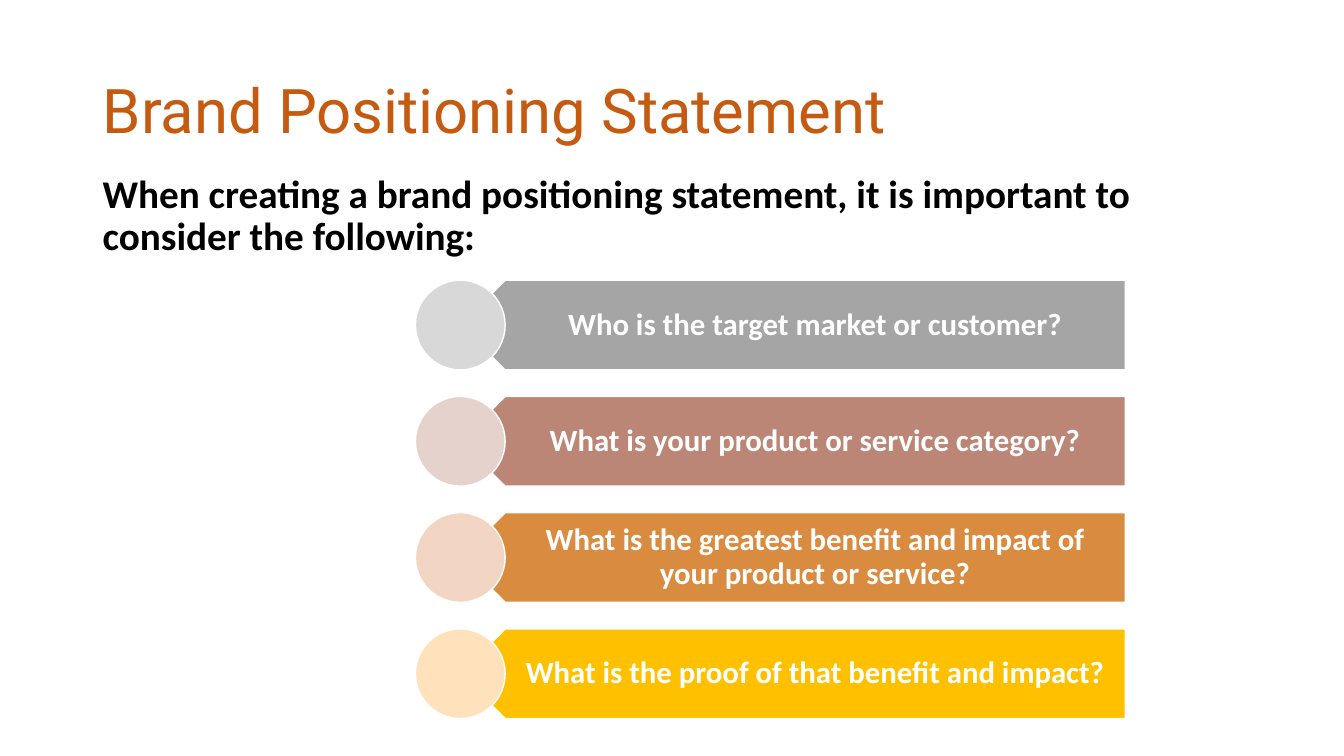
from dataclasses import dataclass

from pptx import Presentation
from pptx.dml.color import RGBColor
from pptx.enum.shapes import MSO_SHAPE
from pptx.enum.text import MSO_ANCHOR, PP_ALIGN
from pptx.util import Inches, Pt

PENTAGON = MSO_SHAPE.PENTAGON
OVAL = MSO_SHAPE.OVAL
TOP, MIDDLE = MSO_ANCHOR.TOP, MSO_ANCHOR.MIDDLE
LEFT, CENTER = PP_ALIGN.LEFT, PP_ALIGN.CENTER


@dataclass(frozen=True)
class Theme:
    title_font: str = "Roboto"
    body_font: str = "Calibri"
    title_size: int = 44
    body_size: int = 28
    question_size: int = 22
    title_color: str = "C55A11"
    body_color: str = "000000"
    white: str = "FFFFFF"
    banners: tuple = ("A5A5A5", "BB8676", "D98B3F", "FFC000")
    circles: tuple = ("D8D8D8", "E6D2CD", "F3D5C4", "FFE1BB")


THEME = Theme()
SLIDE_WIDTH, SLIDE_HEIGHT = 13.33, 7.5
MARGIN = 0.92
CONTENT_WIDTH = SLIDE_WIDTH - 2 * MARGIN
FIRST_ROW, ROW_PITCH, ROW_HEIGHT = 2.78, 1.153, 0.89
CIRCLE_LEFT = 4.12
BANNER_LEFT = CIRCLE_LEFT + ROW_HEIGHT / 2
BANNER_RIGHT = 11.16
QUESTION_LEFT = BANNER_LEFT + ROW_HEIGHT / 4
QUESTION_INSETS = (0.39, 0.09, 0.17, 0.09)

QUESTIONS = (
    "Who is the target market or customer?",
    "What is your product or service category?",
    "What is the greatest benefit and impact of your product or service?",
    "What is the proof of that benefit and impact?",
)


def add_text(page, text, left, top, width, height, *, size, color,
             font=THEME.body_font, bold=False, align=LEFT, anchor=TOP,
             insets=(0.1, 0.05, 0.1, 0.05)):
    box = page.shapes.add_textbox(Inches(left), Inches(top), Inches(width), Inches(height))
    frame = box.text_frame
    frame.word_wrap = True
    frame.vertical_anchor = anchor
    (frame.margin_left, frame.margin_top,
     frame.margin_right, frame.margin_bottom) = map(Inches, insets)
    para = frame.paragraphs[0]
    para.alignment = align
    para.line_spacing = 0.9
    span = para.add_run()
    span.text = text
    span.font.name = font
    span.font.size = Pt(size)
    span.font.bold = bold
    span.font.color.rgb = RGBColor.from_string(color)


def add_shape(page, kind, left, top, width, height, color, rotation=0):
    shape = page.shapes.add_shape(
        kind, Inches(left), Inches(top), Inches(width), Inches(height))
    shape.rotation = rotation
    shape.shadow.inherit = False
    shape.fill.solid()
    shape.fill.fore_color.rgb = RGBColor.from_string(color)
    shape.line.color.rgb = RGBColor.from_string(THEME.white)
    shape.line.width = Pt(1)


def add_question(page, row, question):
    top = FIRST_ROW + row * ROW_PITCH
    add_shape(page, PENTAGON, BANNER_LEFT, top, BANNER_RIGHT - BANNER_LEFT,
              ROW_HEIGHT, THEME.banners[row], rotation=180)
    add_text(page, question, QUESTION_LEFT, top, BANNER_RIGHT - QUESTION_LEFT,
             ROW_HEIGHT, size=THEME.question_size, color=THEME.white, bold=True,
             align=CENTER, anchor=MIDDLE, insets=QUESTION_INSETS)
    add_shape(page, OVAL, CIRCLE_LEFT, top, ROW_HEIGHT, ROW_HEIGHT, THEME.circles[row])


def main():
    deck = Presentation()
    deck.slide_width, deck.slide_height = Inches(SLIDE_WIDTH), Inches(SLIDE_HEIGHT)
    page = deck.slides.add_slide(deck.slide_layouts[6])
    add_text(page, "Brand Positioning Statement", MARGIN, 0.4, CONTENT_WIDTH, 1.45,
             size=THEME.title_size, color=THEME.title_color,
             font=THEME.title_font, anchor=MIDDLE)
    add_text(page, "When creating a brand positioning statement, it is important to "
             "consider the following:", MARGIN, 1.68, CONTENT_WIDTH, 4.76,
             size=THEME.body_size, color=THEME.body_color, bold=True)
    for row, question in enumerate(QUESTIONS):
        add_question(page, row, question)
    deck.save("out.pptx")


if __name__ == "__main__":
    main()
